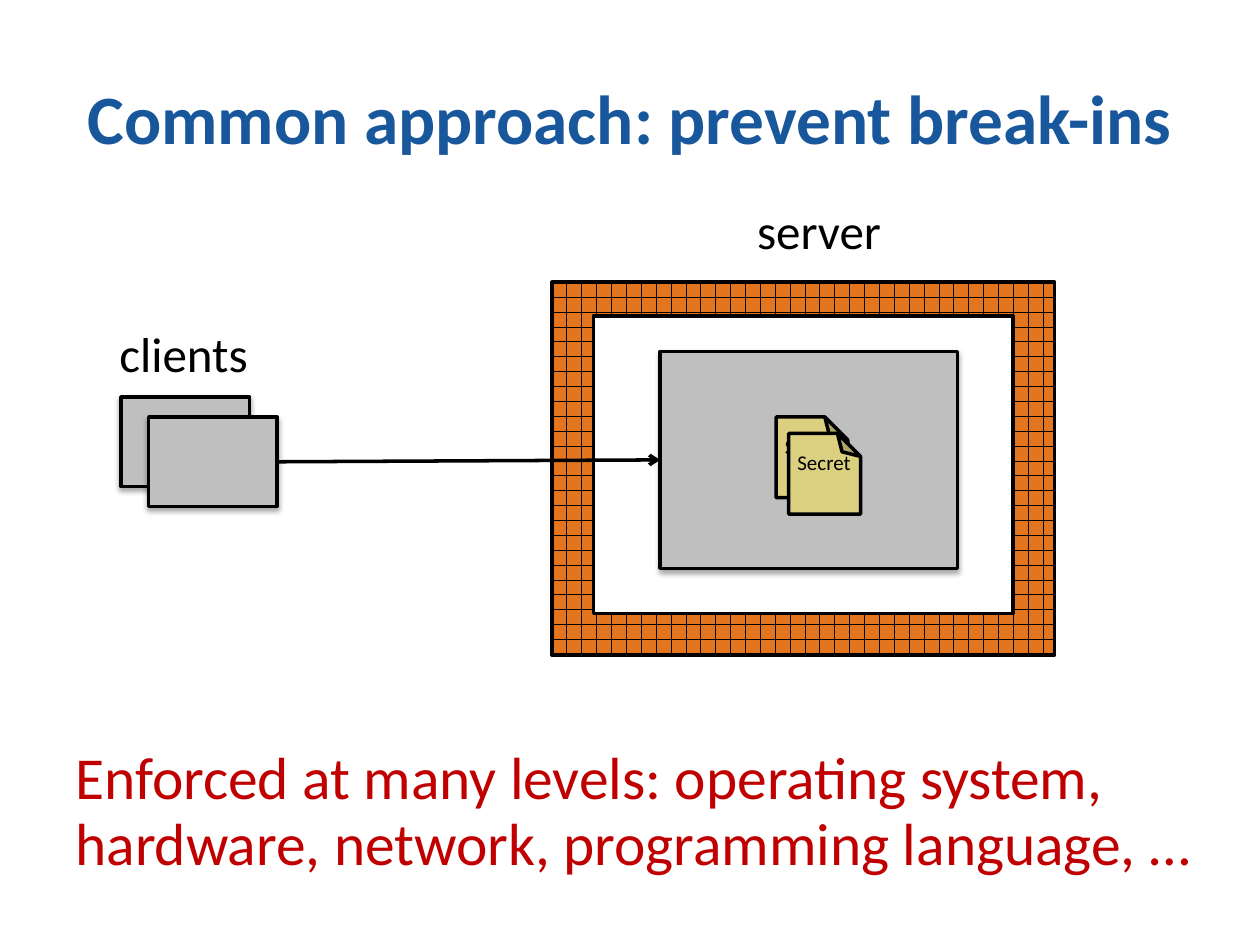
from lxml import etree
from pptx import Presentation
from pptx.dml.color import RGBColor
from pptx.enum.dml import MSO_PATTERN
from pptx.enum.shapes import MSO_CONNECTOR, MSO_SHAPE
from pptx.enum.text import MSO_ANCHOR, MSO_AUTO_SIZE, PP_ALIGN
from pptx.oxml import parse_xml
from pptx.oxml.ns import nsdecls, qn
from pptx.util import Inches, Pt

COLORS = {
    "title": "18579B",
    "note": "C00000",
    "ink": "000000",
    "white": "FFFFFF",
    "brick": "E2751D",
    "computer": "BFBFBF",
    "paper": "DAD080",
}
FONT = "Calibri"
LINE_WIDTH = Pt(2)
RECTANGLE = MSO_SHAPE.RECTANGLE
ROUNDED = MSO_SHAPE.ROUNDED_RECTANGLE
FOLDED = MSO_SHAPE.FOLDED_CORNER
BRICKS = MSO_PATTERN.HORIZONTAL_BRICK
STRAIGHT = MSO_CONNECTOR.STRAIGHT
CENTER = PP_ALIGN.CENTER
MIDDLE = MSO_ANCHOR.MIDDLE
FIT_SHAPE = MSO_AUTO_SIZE.SHAPE_TO_FIT_TEXT
FIXED_SIZE = MSO_AUTO_SIZE.NONE
LEFT_SIDE, RIGHT_SIDE = 1, 3


def color(name):
    return RGBColor.from_string(COLORS[name])


def add_text(shapes, text, box, size, color_name="ink", bold=False, wrap=True,
             **paragraph_format):
    text_box = shapes.add_textbox(*map(Inches, box))
    frame = text_box.text_frame
    frame.word_wrap = wrap
    frame.auto_size = FIT_SHAPE
    paragraph = frame.paragraphs[0]
    for name, value in paragraph_format.items():
        setattr(paragraph, name, value)
    run = paragraph.add_run()
    run.text = text
    for name, value in {"name": FONT, "size": Pt(size), "bold": bold}.items():
        setattr(run.font, name, value)
    run.font.color.rgb = color(color_name)
    return text_box


def add_box(shapes, kind, box, fill_name):
    shape = shapes.add_shape(kind, *map(Inches, box))
    shape.shadow.inherit = False
    shape.fill.solid()
    shape.fill.fore_color.rgb = color(fill_name)
    shape.line.color.rgb = color("ink")
    shape.line.width = LINE_WIDTH
    return shape


def add_wall(slide):
    shapes = slide.shapes.add_group_shape().shapes
    wall = add_box(shapes, RECTANGLE, (4.38, 2.24, 3.99, 2.96), "brick")
    wall.fill.patterned()
    wall.fill.pattern = BRICKS
    wall.fill.fore_color.rgb = color("ink")
    wall.fill.back_color.rgb = color("brick")
    add_box(shapes, RECTANGLE, (4.71, 2.51, 3.33, 2.36), "white")


def add_computer(slide, box):
    """Add a grey square-cornered box with a soft shadow below it."""
    computer = add_box(slide.shapes, ROUNDED, box, "computer")
    computer.adjustments[0] = 0
    effects = computer._element.spPr.find(qn("a:effectLst"))
    effects.append(parse_xml(
        f'<a:outerShdw {nsdecls("a")} blurRad="{Pt(3.1)}" dist="{Pt(1.8)}" '
        f'dir="5400000" rotWithShape="0"><a:srgbClr val="{COLORS["ink"]}">'
        '<a:alpha val="35000"/></a:srgbClr></a:outerShdw>'))
    return computer


def add_secret(slide, left, top):
    """Add a page with its top right corner folded, and its label."""
    shapes = slide.shapes.add_group_shape().shapes
    page = add_box(shapes, FOLDED, (left, top, 0.57, 0.64), "paper")
    properties = page._element.spPr
    properties.find(qn("a:xfrm")).set("flipV", "1")
    geometry = properties.find(qn("a:prstGeom"))
    fold = geometry.find(qn("a:avLst"))
    if fold is None:
        fold = etree.SubElement(geometry, qn("a:avLst"))
    etree.SubElement(fold, qn("a:gd"), name="adj", fmla="val 32100")
    add_text(shapes, "Secret", (left - 0.03, top + 0.08, 0.79, 0.3), 12)


def add_arrow(slide, start, end):
    """Join the right side of one box to the left side of another."""
    arrow = slide.shapes.add_connector(STRAIGHT, 0, 0, 0, 0)
    arrow.begin_connect(start, RIGHT_SIDE)
    arrow.end_connect(end, LEFT_SIDE)
    arrow.line.color.rgb = color("ink")
    arrow.line.width = LINE_WIDTH
    line = arrow._element.spPr.find(qn("a:ln"))
    etree.SubElement(line, qn("a:tailEnd"), type="arrow")
    etree.SubElement(arrow._element.spPr, qn("a:effectLst"))


def main():
    presentation = Presentation()
    presentation.slide_width = Inches(10)
    presentation.slide_height = Inches(7.5)
    slide = presentation.slides.add_slide(presentation.slide_layouts[6])
    shapes = slide.shapes

    add_wall(slide)
    title = add_text(shapes, "Common approach: prevent break-ins",
                     (0.5, 0.3, 9, 1.25), 39.6, "title", bold=True, alignment=CENTER)
    title.text_frame.auto_size = FIXED_SIZE
    title.text_frame.vertical_anchor = MIDDLE
    add_text(shapes,
             "Enforced at many levels: operating system, hardware, network, "
             "programming language, …",
             (0.5, 5.86, 9.28, 1.17), 34, "note", line_spacing=Pt(38))
    add_text(shapes, "server", (5.54, 1.54, 1.92, 0.57), 28, alignment=CENTER)
    add_text(shapes, "clients", (0.85, 2.52, 1.24, 0.57), 28, wrap=False)

    add_computer(slide, (0.96, 3.15, 1.02, 0.71))
    client = add_computer(slide, (1.18, 3.31, 1.02, 0.71))
    server = add_computer(slide, (5.24, 2.79, 2.36, 1.72))
    add_arrow(slide, client, server)
    for left, top in ((6.16, 3.31), (6.26, 3.44)):
        add_secret(slide, left, top)

    presentation.save("out.pptx")


if __name__ == "__main__":
    main()
